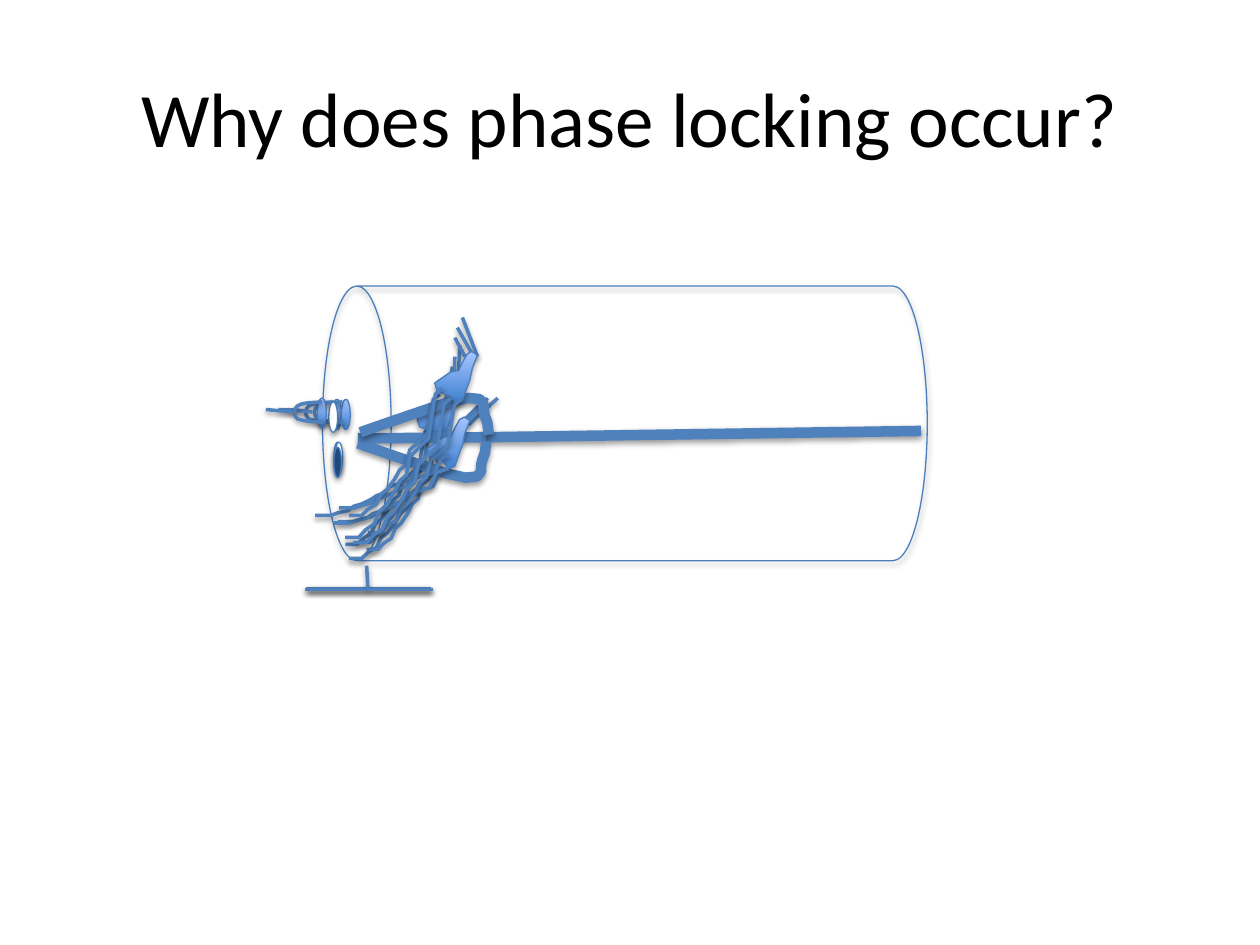
"""Build a slide asking why phase locking occurs, with three winged figures in a cylinder."""
from dataclasses import dataclass
from typing import Optional, Union

import lxml.etree
import pptx
import pptx.dml.color
import pptx.enum.shapes
import pptx.enum.text
import pptx.oxml.ns
import pptx.util

RGBColor = pptx.dml.color.RGBColor
BLACK = RGBColor(0x00, 0x00, 0x00)
WHITE = RGBColor(0xFF, 0xFF, 0xFF)
NAVY = RGBColor(0x1F, 0x49, 0x7D)
STROKE = RGBColor(0x4F, 0x81, 0xBD)
EDGE = RGBColor(0x4B, 0x7E, 0xBC)
GRADIENT = (RGBColor(0x3F, 0x80, 0xCE), RGBColor(0xA4, 0xC4, 0xFF))

WIDTH, HEIGHT = pptx.util.Inches(10), pptx.util.Inches(7.5)
COLUMN, ROW = WIDTH // 1000, HEIGHT // 750
EDGE_WEIGHT, THIN, THICK = 0.75, 2, 6

Curve = tuple[tuple[int, int], ...]

FEATHER: Curve = (
    (100, 0), (93, 4), (90, 16), (86, 33), (73, 41), (67, 45), (63, 57),
    (56, 61), (50, 69), (42, 77), (35, 81), (30, 89), (21, 93), (14, 98), (0, 98))
WING: Curve = (
    (86, 6), (82, 4), (72, 8), (61, 22), (53, 35), (36, 37), (0, 55), (6, 69),
    (36, 76), (46, 88), (61, 84), (72, 61), (78, 49), (83, 31), (94, 10))
BEAK: Curve = (
    (95, 0), (48, 5), (29, 11), (16, 20), (9, 34), (6, 52), (9, 70),
    (16, 84), (36, 93), (64, 98), (100, 100))
LIMB: Curve = (
    (0, 6), (25, 35), (49, 62), (68, 83), (83, 94), (92, 91), (95, 78),
    (95, 62), (96, 48), (98, 30), (99, 0))
SPINE: Curve = ((0, 100), (100, 0))


@dataclass(frozen=True)
class Outline:
    """A curve in percent of its box; a negative height mirrors it."""
    curve: Curve
    left: int
    top: int
    width: int
    height: int
    weight: float = THIN
    filled: bool = False


@dataclass(frozen=True)
class Oval:
    """A narrow ellipse with a plain colour, or the gradient if none is given."""
    left: int
    top: int
    width: int = 7
    height: int = 24
    color: Optional[RGBColor] = None


@dataclass(frozen=True)
class Strand:
    """A straight line between two grid points."""
    left: int
    top: int
    right: int
    bottom: int
    weight: float = THIN


Part = Union[Outline, Oval, Strand]


def feather(left: int, top: int, width: int = 88, height: int = 43) -> Outline:
    """Return a feather filling the given box."""
    return Outline(FEATHER, left, top, width, height)


def wing(left: int, top: int) -> Outline:
    """Return a filled wing."""
    return Outline(WING, left, top, 36, 49, EDGE_WEIGHT, True)


def beak(left: int) -> Outline:
    """Return the open loop of a head."""
    return Outline(BEAK, left, 319, 25, 16)


FIGURES: tuple[tuple[Part, ...], ...] = (
    (feather(274, 339, 68, 95), wing(331, 305), feather(277, 349, 73, 96),
     feather(291, 340, 65, 98), feather(286, 342, 58, 90),
     Oval(265, 351, 6), Oval(264, 317), beak(241),
     Strand(221, 325, 241, 326), Strand(284, 348, 386, 347, THICK),
     Strand(357, 306, 359, 291), Strand(365, 274, 363, 310),
     Strand(361, 283, 360, 310), Strand(243, 467, 342, 467)),
    (Oval(266, 351, 6, color=WHITE), Outline(LIMB, 284, 350, 103, 31, THICK),
     Oval(271, 317), beak(248), Strand(228, 325, 248, 327),
     Strand(381, 321, 368, 334), Strand(395, 316, 372, 337),
     Strand(387, 316, 369, 338), Strand(242, 468, 342, 468),
     Strand(291, 449, 292, 467), feather(250, 367), wing(339, 329),
     feather(268, 372), feather(269, 361), feather(265, 373)),
    (Oval(261, 319, color=WHITE), Outline(LIMB, 286, 345, 103, -31, THICK),
     Oval(252, 316), beak(232), Strand(211, 325, 232, 327),
     Strand(361, 268, 369, 283), Strand(367, 252, 379, 283),
     Strand(363, 260, 376, 283), Oval(265, 355, 6, color=NAVY),
     Strand(245, 468, 344, 468), feather(277, 313, 72, 98), wing(345, 277),
     feather(292, 317, 74, 108), feather(274, 308, 77, 121),
     feather(280, 316, 78, 117)),
)


def add_shadow(shape, opacity: int, distance: float) -> None:
    """Give a shape or connector a soft shadow straight below it."""
    qn = pptx.oxml.ns.qn
    properties = shape._element.spPr
    effects = properties.find(qn("a:effectLst"))
    if effects is None:
        effects = lxml.etree.SubElement(properties, qn("a:effectLst"))
    shadow = lxml.etree.SubElement(
        effects, qn("a:outerShdw"), blurRad=str(pptx.util.Pt(3.1)),
        dist=str(pptx.util.Pt(distance)), dir="5400000", rotWithShape="0")
    color = lxml.etree.SubElement(shadow, qn("a:srgbClr"), val=str(BLACK))
    lxml.etree.SubElement(color, qn("a:alpha"), val=str(opacity * 1000))


def set_line(shape, weight: float) -> None:
    """Set line and shadow; hairlines belong to edges, wider ones to strokes."""
    is_edge = weight == EDGE_WEIGHT
    shape.line.color.rgb = EDGE if is_edge else STROKE
    shape.line.width = pptx.util.Pt(weight)
    add_shadow(shape, 35 if is_edge else 38, 1.8 if is_edge else 1.6)


def set_gradient(shape) -> None:
    """Fill a shape with the upright blue gradient."""
    shape.fill.gradient()
    shape.fill.gradient_angle = 90
    for stop, color, position in zip(shape.fill.gradient_stops, GRADIENT, (0, 1)):
        stop.color.rgb = color
        stop.position = position


def draw(shapes, part: Part) -> None:
    """Draw one part of a figure."""
    if isinstance(part, Strand):
        line = shapes.add_connector(
            pptx.enum.shapes.MSO_CONNECTOR.STRAIGHT, part.left * COLUMN,
            part.top * ROW, part.right * COLUMN, part.bottom * ROW)
        set_line(line, part.weight)
        return
    if isinstance(part, Oval):
        shape = shapes.add_shape(
            pptx.enum.shapes.MSO_SHAPE.OVAL, part.left * COLUMN, part.top * ROW,
            part.width * COLUMN, part.height * ROW)
        weight, filled, color = EDGE_WEIGHT, True, part.color
    else:
        points = [(round((part.left + x * part.width / 100) * COLUMN),
                   round((part.top + y * part.height / 100) * ROW))
                  for x, y in part.curve]
        builder = shapes.build_freeform(*points[0])
        builder.add_line_segments(points[1:], close=part.filled)
        shape = builder.convert_to_shape()
        weight, filled, color = part.weight, part.filled, None
    shape.shadow.inherit = False
    if color is not None:
        shape.fill.solid()
        shape.fill.fore_color.rgb = color
    elif filled:
        set_gradient(shape)
    else:
        shape.fill.background()
    set_line(shape, weight)


def add_title(slide, text: str):
    """Fill and place the title placeholder."""
    title = slide.shapes.title
    title.left, title.top = 50 * COLUMN, 30 * ROW
    title.width, title.height = 900 * COLUMN, 125 * ROW
    title.text_frame.vertical_anchor = pptx.enum.text.MSO_ANCHOR.MIDDLE
    para = title.text_frame.paragraphs[0]
    para.alignment = pptx.enum.text.PP_ALIGN.CENTER
    span = para.add_run()
    span.text = text
    span.font.name, span.font.size = "Calibri", pptx.util.Pt(44)
    span.font.color.rgb = BLACK
    return title


def add_cylinder(slide):
    """Add the cylinder lying on its side."""
    cylinder = slide.shapes.add_shape(
        pptx.enum.shapes.MSO_SHAPE.CAN, 387 * COLUMN, 96 * ROW, 218 * COLUMN, 480 * ROW)
    cylinder.rotation = 270
    cylinder.shadow.inherit = False
    cylinder.fill.background()
    set_line(cylinder, EDGE_WEIGHT)
    return cylinder


def main() -> None:
    """Build and save the deck."""
    deck = pptx.Presentation()
    deck.slide_width, deck.slide_height = WIDTH, HEIGHT
    slide = deck.slides.add_slide(deck.slide_layouts.get_by_name("Title Only"))
    title = add_title(slide, "Why does phase locking occur?")
    add_cylinder(slide)._element.addnext(title._element)
    draw(slide.shapes, Outline(SPINE, 385, 342, 346, 5, THICK))
    for figure in FIGURES:
        group = slide.shapes.add_group_shape()
        for part in figure:
            draw(group.shapes, part)
    deck.save("out.pptx")


if __name__ == "__main__":
    main()
